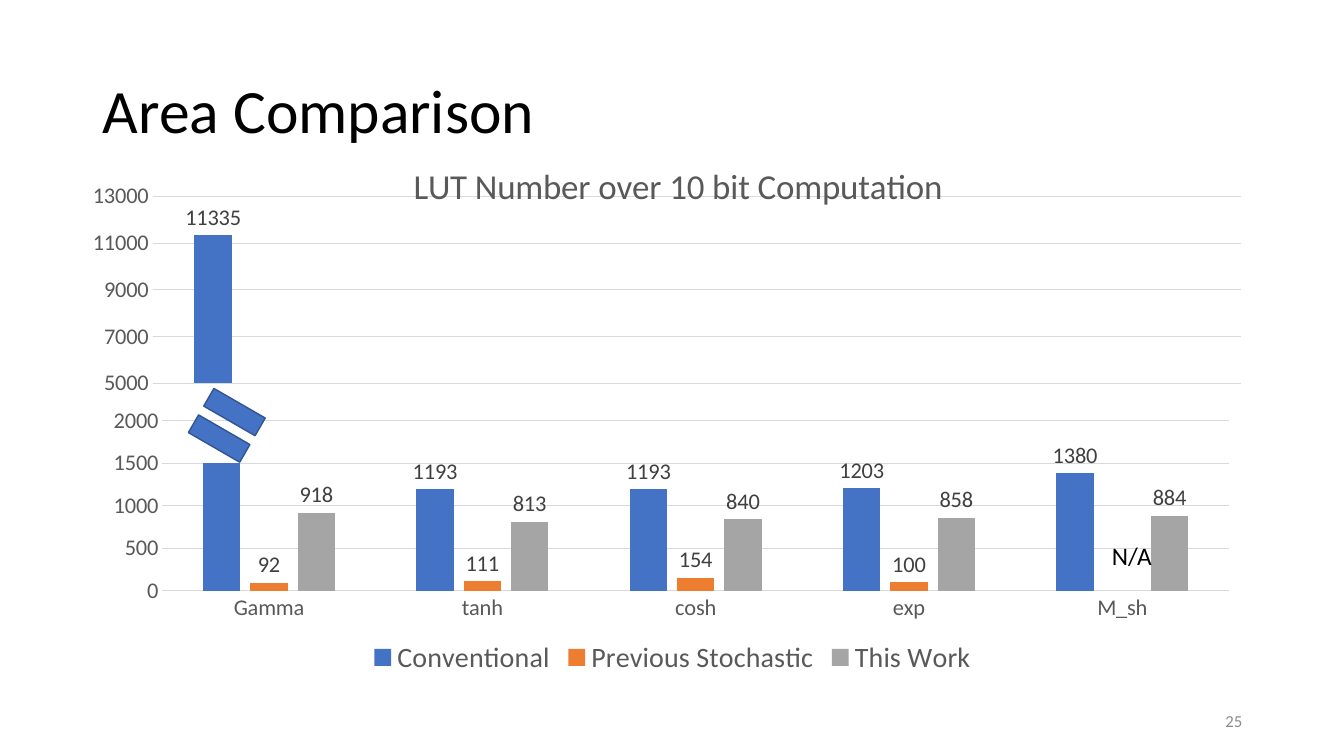
from dataclasses import dataclass

from lxml import etree
from pptx import Presentation
from pptx.chart.data import CategoryChartData
from pptx.dml.color import RGBColor
from pptx.enum.chart import XL_CHART_TYPE, XL_LABEL_POSITION, XL_LEGEND_POSITION, XL_TICK_MARK
from pptx.enum.shapes import MSO_SHAPE
from pptx.enum.text import MSO_ANCHOR, PP_ALIGN
from pptx.oxml.ns import qn
from pptx.util import Inches, Pt

COLUMNS = XL_CHART_TYPE.COLUMN_CLUSTERED
OUTSIDE_END = XL_LABEL_POSITION.OUTSIDE_END
BOTTOM = XL_LEGEND_POSITION.BOTTOM
NO_TICK = XL_TICK_MARK.NONE
MATH_EQUAL = MSO_SHAPE.MATH_EQUAL
MIDDLE, TOP = MSO_ANCHOR.MIDDLE, MSO_ANCHOR.TOP
LEFT, RIGHT = PP_ALIGN.LEFT, PP_ALIGN.RIGHT
TITLE_ONLY = 5


@dataclass(frozen=True)
class Theme:
    font: str = "Calibri"
    black: str = "000000"
    axis_text: str = "595959"
    label_text: str = "404040"
    number_text: str = "8C8C8C"
    grid: str = "D9D9D9"
    break_line: str = "325491"
    blue: str = "4472C4"
    orange: str = "ED7D31"
    gray: str = "A5A5A5"
    title_size: int = 44
    chart_title_size: int = 25
    legend_size: int = 20
    note_size: int = 18
    axis_size: int = 16
    number_size: int = 12


def assign(target, values):
    for name, value in values.items():
        setattr(target, name, value)


def place(parent, index, **fractions):
    for old in parent.findall(qn("c:layout")):
        parent.remove(old)
    layout = etree.Element(qn("c:layout"))
    parent.insert(index, layout)
    manual = etree.SubElement(layout, qn("c:manualLayout"))
    if "w" in fractions:
        etree.SubElement(manual, qn("c:layoutTarget")).set("val", "inner")
    for side in "xy":
        etree.SubElement(manual, qn(f"c:{side}Mode")).set("val", "edge")
    for name, value in fractions.items():
        etree.SubElement(manual, qn(f"c:{name}")).set("val", str(value))


class SlideBuilder:
    def __init__(self, slide, theme):
        self.slide = slide
        self.theme = theme

    def style(self, font, size, color):
        assign(font, {"name": self.theme.font, "size": Pt(size), "bold": False})
        font.color.rgb = RGBColor.from_string(color)

    def fill_text(self, frame, text, size, color, align=LEFT, anchor=TOP, wrap=True, spacing=1.0):
        assign(frame, {"word_wrap": wrap, "vertical_anchor": anchor})
        paragraph = frame.paragraphs[0]
        assign(paragraph, {"alignment": align, "line_spacing": spacing})
        run = paragraph.add_run()
        run.text = text
        self.style(run.font, size, color)

    def title(self, text, box):
        heading = self.slide.shapes.title
        assign(heading, dict(zip(("left", "top", "width", "height"), map(Inches, box))))
        self.fill_text(heading.text_frame, text, self.theme.title_size, self.theme.black,
                       anchor=MIDDLE, spacing=0.9)

    def text(self, text, box, size, color, **layout):
        frame = self.slide.shapes.add_textbox(*map(Inches, box)).text_frame
        self.fill_text(frame, text, size, color, **layout)

    def axis_break(self, box, rotation):
        mark = self.slide.shapes.add_shape(MATH_EQUAL, *map(Inches, box))
        mark.rotation = rotation
        mark.shadow.inherit = False
        mark.fill.solid()
        mark.fill.fore_color.rgb = RGBColor.from_string(self.theme.blue)
        mark.line.color.rgb = RGBColor.from_string(self.theme.break_line)
        mark.line.width = Pt(1)

    def columns(self, box, categories, series, scale, plot_area, labelled):
        data = CategoryChartData()
        data.categories = categories
        for name, values, _ in series:
            data.add_series(name, values)
        chart = self.slide.shapes.add_chart(COLUMNS, *map(Inches, box), data).chart
        assign(chart, {"has_title": False, "has_legend": False})
        self.style(chart.font, self.theme.axis_size, self.theme.axis_text)
        plot = chart.plots[0]
        assign(plot, {"gap_width": 219, "overlap": -27, "vary_by_categories": False})
        place(chart._chartSpace.find(".//" + qn("c:plotArea")), 0, **plot_area)
        self.axes(chart, scale)
        for drawn, (name, values, color) in zip(plot.series, series):
            self.paint(drawn, color)
            self.value_labels(drawn, [i for i, value in enumerate(values) if labelled(name, i, value)])
        return chart

    def axes(self, chart, scale):
        grid_color = RGBColor.from_string(self.theme.grid)
        for axis in (chart.category_axis, chart.value_axis):
            assign(axis, {"major_tick_mark": NO_TICK, "minor_tick_mark": NO_TICK})
            self.style(axis.tick_labels.font, self.theme.axis_size, self.theme.axis_text)
        baseline = chart.category_axis.format.line
        baseline.color.rgb = grid_color
        baseline.width = Pt(0.75)
        counts = chart.value_axis
        assign(counts, dict(zip(("minimum_scale", "maximum_scale", "major_unit"), scale)))
        counts.format.line.fill.background()
        counts.major_gridlines.format.line.color.rgb = grid_color
        counts.major_gridlines.format.line.width = Pt(0.75)

    def paint(self, drawn, color):
        drawn.invert_if_negative = False
        if color:
            drawn.format.fill.solid()
            drawn.format.fill.fore_color.rgb = RGBColor.from_string(color)
        else:
            drawn.format.fill.background()

    def value_labels(self, drawn, indexes):
        drawn.data_labels.show_value = False
        for index in indexes:
            label = drawn.points[index].data_label
            self.style(label.font, self.theme.axis_size, self.theme.label_text)
            label.position = OUTSIDE_END

    def chart_title(self, chart, text, **position):
        chart.has_title = True
        heading = chart.chart_title
        self.fill_text(heading.text_frame, text, self.theme.chart_title_size, self.theme.axis_text)
        place(heading._element, 1, **position)

    def legend(self, chart):
        chart.has_legend = True
        assign(chart.legend, {"position": BOTTOM, "include_in_layout": False})
        self.style(chart.legend.font, self.theme.legend_size, self.theme.axis_text)


def main():
    theme = Theme()
    deck = Presentation()
    assign(deck, {"slide_width": Inches(13.33), "slide_height": Inches(7.5)})
    page = SlideBuilder(deck.slides.add_slide(deck.slide_layouts[TITLE_ONLY]), theme)
    page.title("Area Comparison", (0.92, 0.4, 11.5, 1.45))

    lower = page.columns(
        (0.92, 3.98, 11.5, 2.77),
        ["Gamma", "tanh", "cosh", "exp", "M_sh"],
        [("Conventional", (1500, 1193, 1193, 1203, 1380), theme.blue),
         ("Previous Stochastic", (92, 111, 154, 100, None), theme.orange),
         ("This Work", (918, 813, 840, 858, 884), theme.gray)],
        (0, 2000, 500),
        {"x": 0.06, "y": 0.07, "w": 0.92, "h": 0.61},
        lambda name, index, value: value is not None and (name, index) != ("Conventional", 0))
    page.legend(lower)

    upper = page.columns(
        (0.92, 1.34, 11.5, 2.65),
        ["1", "2", "3", "4", "5"],
        [("Series 1", (11335, 0, 0, 0, 0), theme.blue),
         ("Series 2", (0, 0, 0, 0, None), None),
         ("Series 3", (0, 0, 0, 0, 0), None)],
        (5000, 13000, 2000),
        {"x": 0.05, "y": 0.23, "w": 0.94, "h": 0.7},
        lambda name, index, value: bool(value))
    upper.category_axis.visible = False
    page.chart_title(upper, "LUT Number over 10 bit Computation", x=0.27, y=0.08)

    page.axis_break((1.85, 3.79, 0.8, 0.86), 30)
    page.text("N/A", (10.93, 5.31, 0.6, 0.4), theme.note_size, theme.black, wrap=False)
    page.text("25", (9.42, 6.95, 3, 0.4), theme.number_size, theme.number_text,
              align=RIGHT, anchor=MIDDLE)
    deck.save("out.pptx")


if __name__ == "__main__":
    main()
